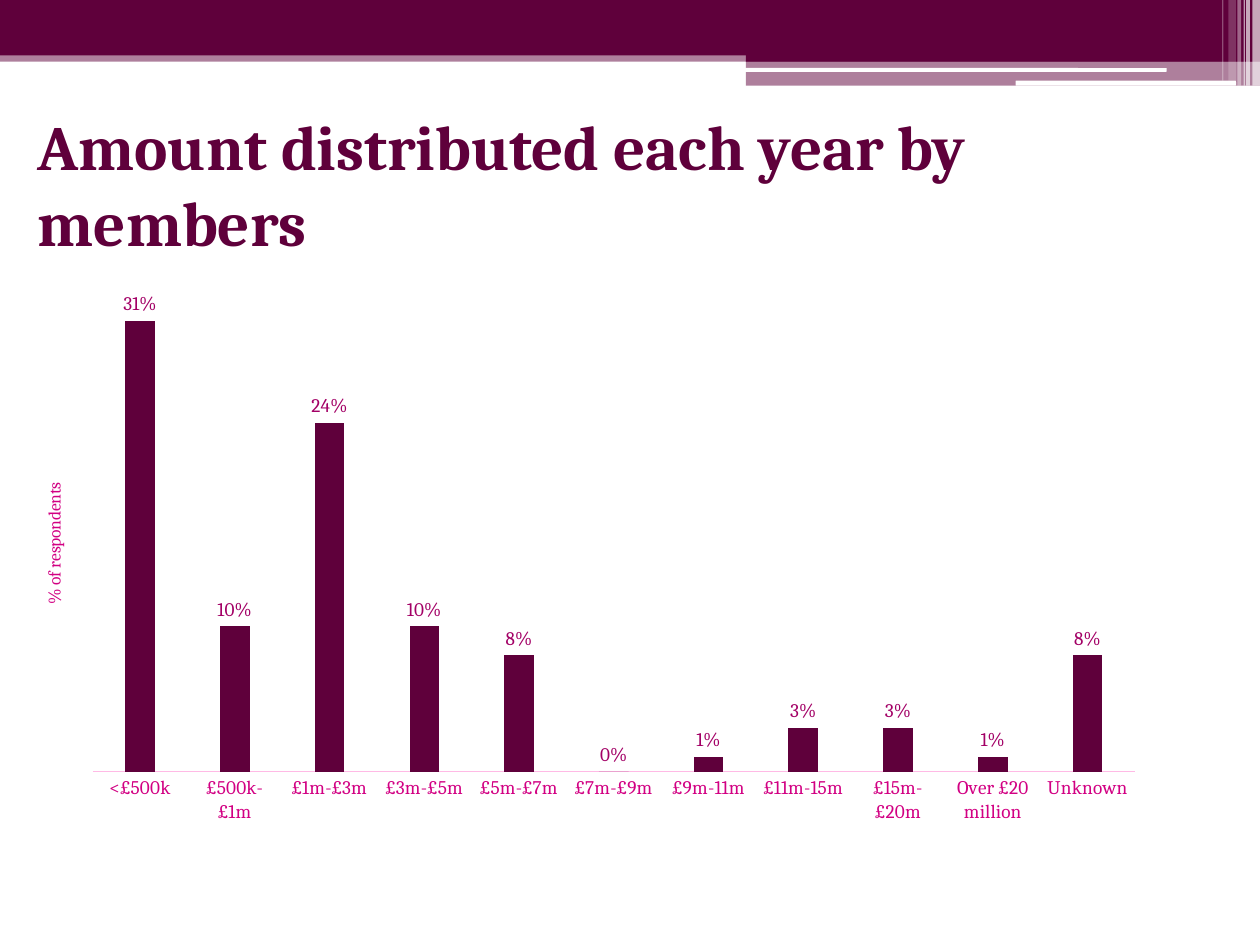
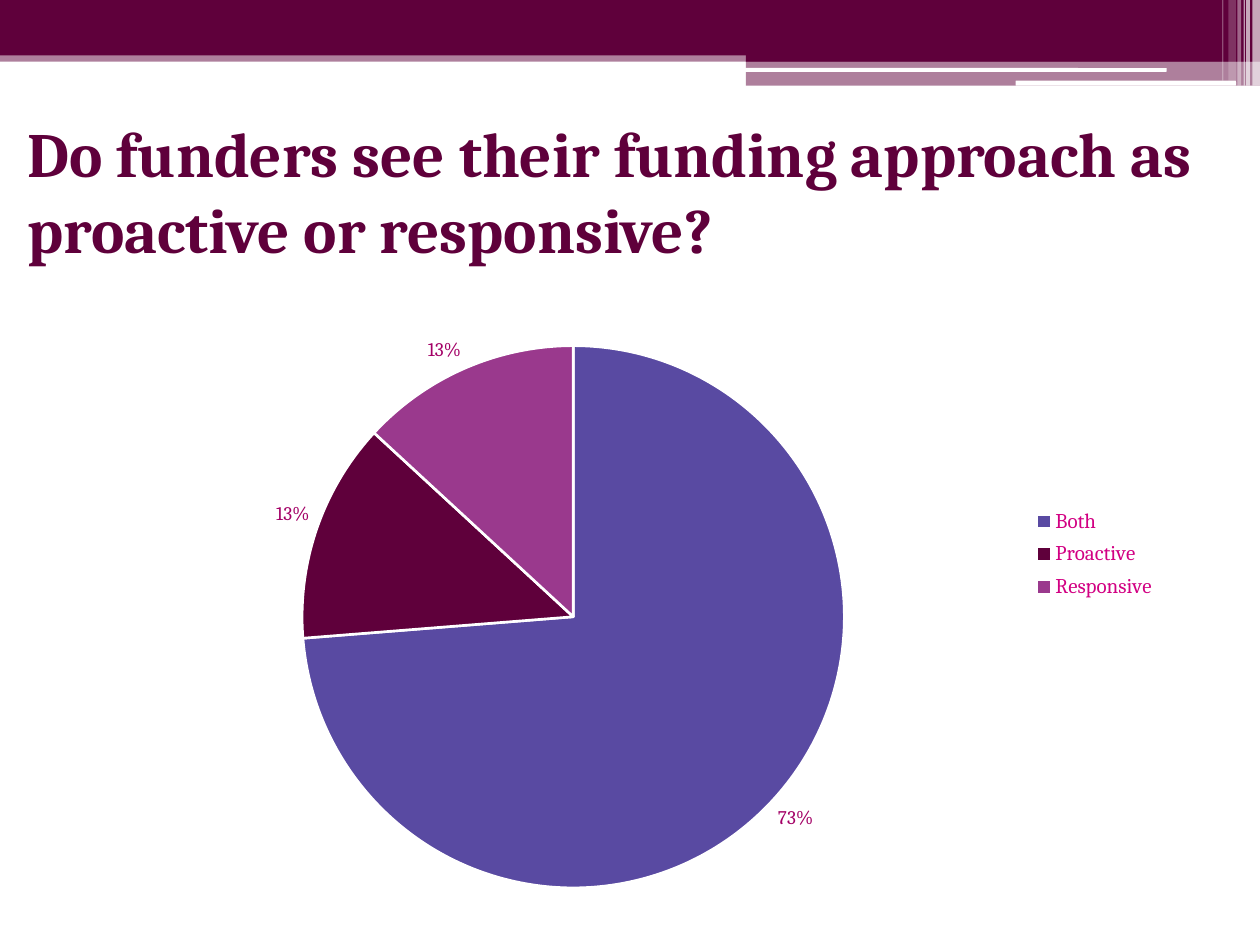
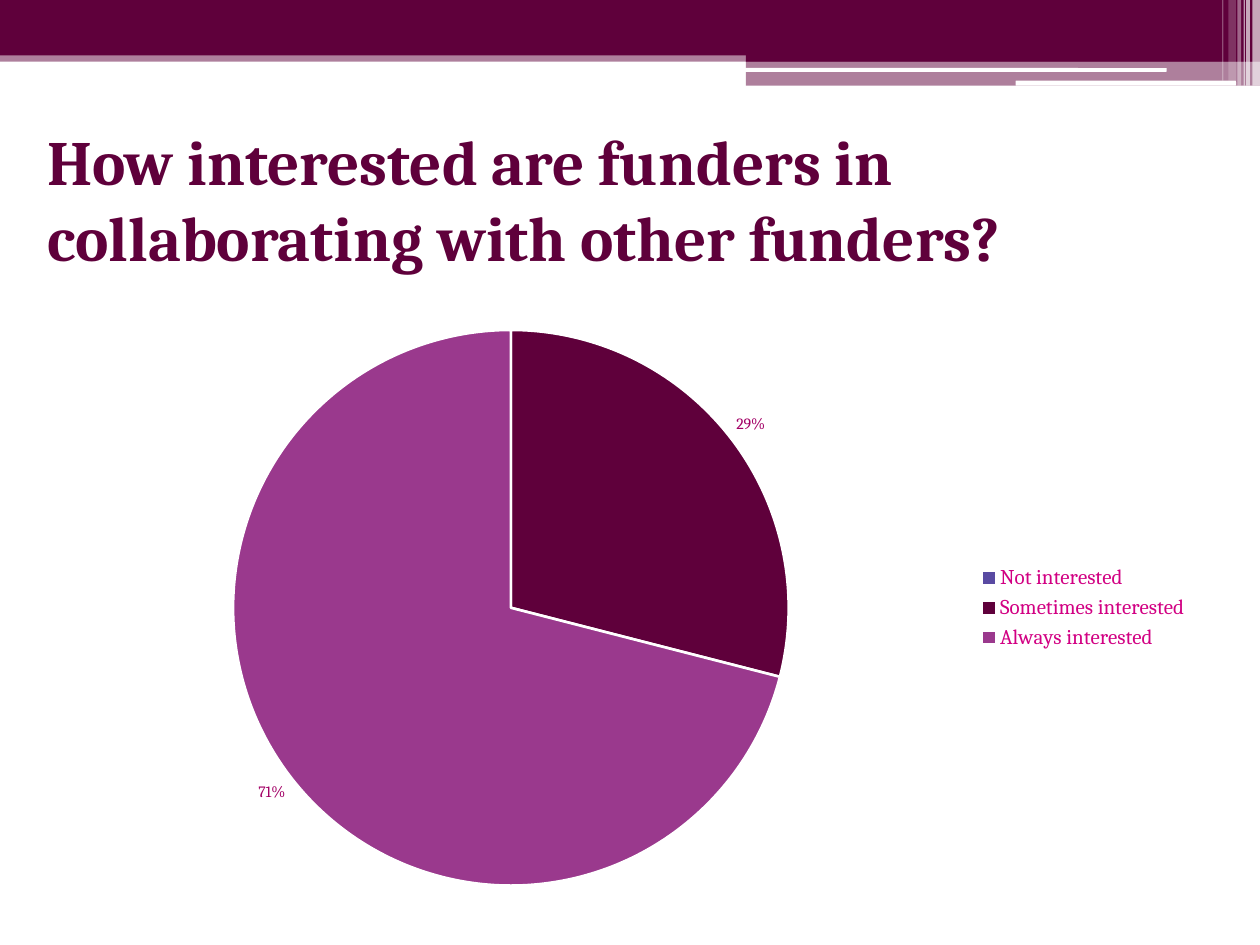
"""Build three slides on how funders distribute, approach and share their funding."""
from dataclasses import dataclass

from lxml import etree
from pptx import Presentation
from pptx.chart.chart import Chart
from pptx.chart.data import CategoryChartData
from pptx.dml.color import RGBColor
from pptx.enum.chart import XL_CHART_TYPE, XL_LABEL_POSITION, XL_LEGEND_POSITION, XL_TICK_MARK
from pptx.enum.shapes import MSO_SHAPE
from pptx.enum.text import MSO_ANCHOR
from pptx.oxml.ns import qn
from pptx.slide import Slide
from pptx.text.text import Font
from pptx.util import Emu, Pt

RECT = MSO_SHAPE.RECTANGLE
ROUNDED = MSO_SHAPE.ROUNDED_RECTANGLE
MIDDLE = MSO_ANCHOR.MIDDLE
COLUMN = XL_CHART_TYPE.COLUMN_CLUSTERED
PIE = XL_CHART_TYPE.PIE
OUTSIDE_END = XL_LABEL_POSITION.OUTSIDE_END
LEGEND_RIGHT = XL_LEGEND_POSITION.RIGHT
NO_TICK = XL_TICK_MARK.NONE

PLUM = RGBColor(0x5F, 0x00, 0x3B)
WHITE = RGBColor(0xFF, 0xFF, 0xFF)
INDIGO = RGBColor(0x59, 0x4A, 0xA2)
ORCHID = RGBColor(0x9A, 0x39, 0x8D)
MAGENTA = RGBColor(0xD2, 0x00, 0x83)
BERRY = RGBColor(0xA3, 0x00, 0x66)
DARK_PLUM = RGBColor(0x30, 0x00, 0x1E)
PALE_PINK = RGBColor(0xFF, 0xBA, 0xE5)

FONT = "Cambria"
PERCENT = "0%"
EMU_PER_PX = 9144
SLIDE_SIZE = (1000, 750)
SLICE_COLORS = (INDIGO, PLUM, ORCHID)


@dataclass(frozen=True)
class Box:
    """A rectangle in px."""

    left: int
    top: int
    width: int
    height: int

    def emu(self) -> tuple[Emu, ...]:
        """Return the four lengths in EMU."""
        return tuple(px(n) for n in (self.left, self.top, self.width, self.height))


@dataclass(frozen=True)
class Band:
    """One piece of the header decoration."""

    box: Box
    color: RGBColor
    opacity: int = 100
    rounded: bool = False


@dataclass(frozen=True)
class Area:
    """A part of a chart, as fractions of the whole chart."""

    x: float
    y: float
    w: float
    h: float


@dataclass(frozen=True)
class Pie:
    """A pie slide: its title, shares and arrangement."""

    title: str
    title_box: Box
    shares: dict[str, float]
    label_size: int
    plot: Area
    legend: Area


HEADER = (
    Band(Box(0, 40, 1000, 9), PLUM, 50),
    Band(Box(0, 0, 1000, 34), PLUM),
    Band(Box(0, 34, 1000, 10), PLUM),
    Band(Box(592, 39, 408, 10), PLUM),
    Band(Box(592, 48, 408, 20), PLUM, 50),
    Band(Box(591, 54, 335, 3), WHITE, rounded=True),
    Band(Box(806, 64, 175, 4), WHITE, rounded=True),
    Band(Box(994, 0, 6, 68), WHITE, 65),
    Band(Box(989, 0, 3, 68), WHITE, 65),
    Band(Box(987, 0, 1, 68), WHITE, 60),
    Band(Box(982, 0, 3, 68), WHITE, 40),
    Band(Box(975, 0, 6, 64), WHITE, 20),
    Band(Box(970, 0, 1, 64), WHITE, 30),
)

AMOUNTS = {
    "<£500k": 0.31,
    "£500k- £1m": 0.1,
    "£1m-£3m": 0.24,
    "£3m-£5m": 0.1,
    "£5m-£7m": 0.08,
    "£7m-£9m": 0,
    "£9m-11m": 0.01,
    "£11m-15m": 0.03,
    "£15m-£20m": 0.03,
    "Over £20 million": 0.01,
    "Unknown": 0.08,
}
AMOUNT_CHART = Box(10, 204, 909, 459)
AMOUNT_PLOT = Area(0.07, 0.01, 0.91, 0.88)
PIE_CHART = Box(50, 246, 900, 473)

PIES = (
    Pie(
        "Do funders see their funding approach as proactive or responsive?",
        Box(12, 92, 976, 118),
        {"Both": 0.73, "Proactive": 0.13, "Responsive": 0.13},
        11,
        Area(0.21, 0.06, 0.48, 0.91),
        Area(0.83, 0.32, 0.16, 0.18),
    ),
    Pie(
        "How interested are funders in collaborating with other funders?",
        Box(28, 99, 900, 117),
        {"Not interested": 0, "Sometimes interested": 0.29, "Always interested": 0.71},
        9,
        Area(0.15, 0.03, 0.49, 0.94),
        Area(0.8, 0.42, 0.2, 0.16),
    ),
)


def px(length: int) -> Emu:
    """Turn px into EMU."""
    return Emu(length * EMU_PER_PX)


def style(font: Font, size: int, color: RGBColor, bold: bool = False) -> None:
    """Give a font the shared face and its own size, colour and weight."""
    font.name = FONT
    font.size = Pt(size)
    font.color.rgb = color
    font.bold = bold


def add_band(slide: Slide, band: Band) -> None:
    """Draw one header band."""
    shape = slide.shapes.add_shape(ROUNDED if band.rounded else RECT, *band.box.emu())
    shape.shadow.inherit = False
    shape.fill.solid()
    shape.fill.fore_color.rgb = band.color
    shape.line.fill.background()
    if band.opacity < 100:
        color = shape.element.spPr.find(f"{qn('a:solidFill')}/{qn('a:srgbClr')}")
        etree.SubElement(color, qn("a:alpha"), val=str(band.opacity * 1000))


def add_titled_slide(prs: Presentation, title: str, box: Box) -> Slide:
    """Add a blank slide with the header and a title."""
    slide = prs.slides.add_slide(prs.slide_layouts[6])
    for band in HEADER:
        add_band(slide, band)
    frame = slide.shapes.add_textbox(*box.emu()).text_frame
    frame.word_wrap = True
    frame.vertical_anchor = MIDDLE
    frame.text = title
    style(frame.paragraphs[0].runs[0].font, 36, PLUM, bold=True)
    return slide


def place(parent: etree.ElementBase, area: Area, index: int, inner: bool = False) -> None:
    """Fix the place of a chart part with a manual layout."""
    for old in parent.findall(qn("c:layout")):
        parent.remove(old)
    layout = etree.Element(qn("c:layout"))
    manual = etree.SubElement(layout, qn("c:manualLayout"))
    if inner:
        etree.SubElement(manual, qn("c:layoutTarget"), val="inner")
    for mode in ("xMode", "yMode"):
        etree.SubElement(manual, qn(f"c:{mode}"), val="edge")
    for side in ("x", "y", "w", "h"):
        etree.SubElement(manual, qn(f"c:{side}"), val=str(getattr(area, side)))
    parent.insert(index, layout)


def add_share_chart(slide: Slide, kind: XL_CHART_TYPE, box: Box, shares: dict[str, float],
                    plot_area: Area, size: int, label_size: int) -> Chart:
    """Add a one-series chart with percentage labels."""
    data = CategoryChartData(number_format=PERCENT)
    data.categories = list(shares)
    data.add_series("Series 1", list(shares.values()))
    chart = slide.shapes.add_chart(kind, *box.emu(), data).chart
    chart.has_title = False
    chart.has_legend = False
    style(chart.font, size, DARK_PLUM)
    plot = chart.plots[0]
    plot.has_data_labels = True
    labels = plot.data_labels
    labels.show_value = True
    labels.show_percentage = False
    labels.number_format = PERCENT
    labels.number_format_is_linked = False
    labels.position = OUTSIDE_END
    style(labels.font, label_size, BERRY)
    place(chart.element.find(f".//{qn('c:plotArea')}"), plot_area, 0, inner=True)
    return chart


def add_amount_slide(prs: Presentation) -> None:
    """Add the column chart of yearly amounts."""
    slide = add_titled_slide(prs, "Amount distributed each year by members", Box(20, 87, 900, 117))
    chart = add_share_chart(slide, COLUMN, AMOUNT_CHART, AMOUNTS, AMOUNT_PLOT, 11, 11)
    plot = chart.plots[0]
    plot.vary_by_categories = False
    plot.gap_width = 219
    plot.overlap = -27
    columns = plot.series[0].format.fill
    columns.solid()
    columns.fore_color.rgb = PLUM

    amounts = chart.category_axis
    amounts.major_tick_mark = NO_TICK
    amounts.format.line.color.rgb = PALE_PINK
    amounts.format.line.width = Pt(0.75)
    style(amounts.tick_labels.font, 11, MAGENTA)

    respondents = chart.value_axis
    respondents.visible = False
    respondents.has_major_gridlines = False
    respondents.minimum_scale = 0
    respondents.maximum_scale = 0.35
    frame = respondents.axis_title.text_frame
    frame.text = "% of respondents"
    style(frame.paragraphs[0].runs[0].font, 10, MAGENTA)
    body = respondents.axis_title.element.find(f".//{qn('a:bodyPr')}")
    body.set("rot", "-5400000")
    body.set("vert", "horz")


def add_pie_slide(prs: Presentation, pie: Pie) -> None:
    """Add a pie chart with its legend."""
    slide = add_titled_slide(prs, pie.title, pie.title_box)
    chart = add_share_chart(slide, PIE, PIE_CHART, pie.shares, pie.plot, 10, pie.label_size)
    chart.plots[0].vary_by_categories = True
    for index, color in enumerate(SLICE_COLORS):
        look = chart.plots[0].series[0].points[index].format
        look.fill.solid()
        look.fill.fore_color.rgb = color
        look.line.color.rgb = WHITE
        look.line.width = Pt(1.5)
    chart.has_legend = True
    legend = chart.legend
    legend.position = LEGEND_RIGHT
    legend.include_in_layout = False
    style(legend.font, 12, MAGENTA)
    place(chart.element.find(f".//{qn('c:legend')}"), pie.legend, 1)


def main() -> None:
    """Build and save the presentation."""
    prs = Presentation()
    prs.slide_width, prs.slide_height = (px(length) for length in SLIDE_SIZE)
    add_amount_slide(prs)
    for pie in PIES:
        add_pie_slide(prs, pie)
    prs.save("out.pptx")


if __name__ == "__main__":
    main()
